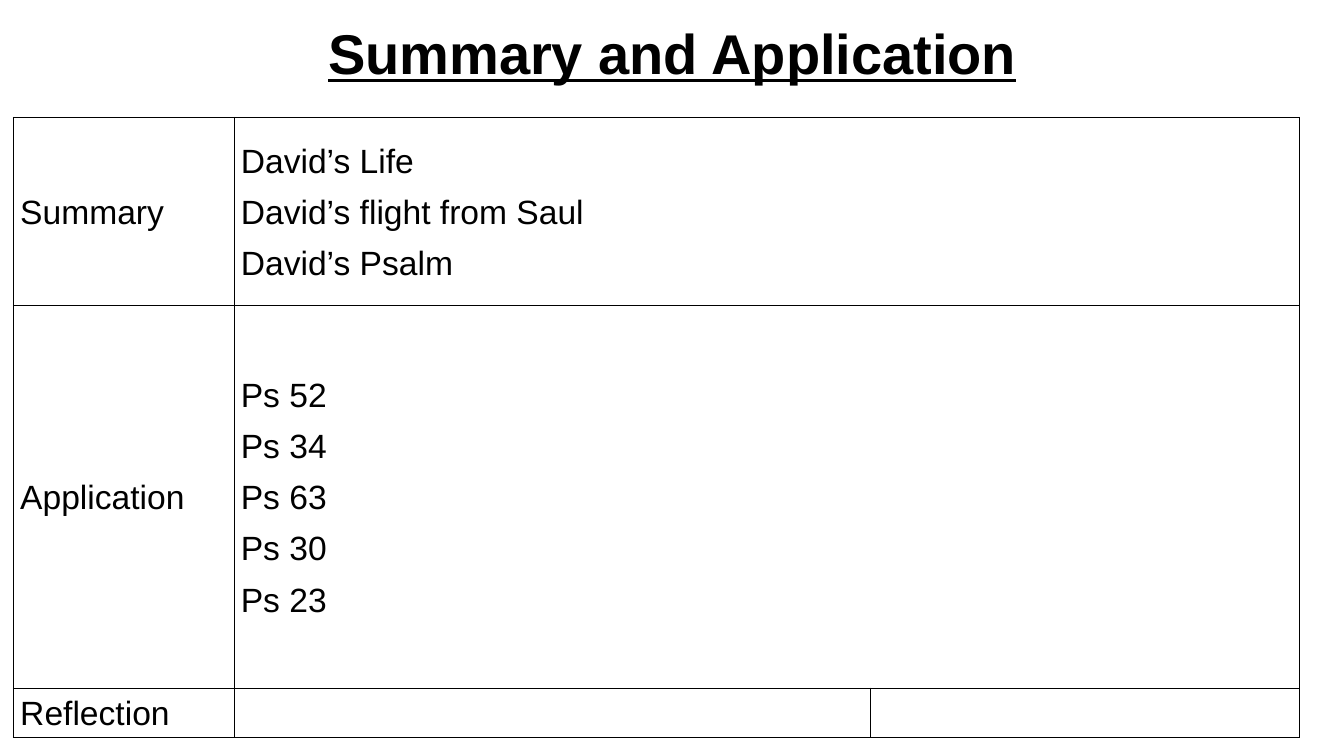
from lxml.etree import SubElement
from pptx import Presentation
from pptx.dml.color import RGBColor
from pptx.enum.text import MSO_ANCHOR as Anchor, PP_ALIGN as Align
from pptx.oxml.ns import qn
from pptx.util import Cm, Pt

# Content
TITLE = "Summary and Application"
SECTIONS = [
    ("Summary", ["David’s Life", "David’s flight from Saul", "David’s Psalm"]),
    ("Application", ["Ps 52", "Ps 34", "Ps 63", "Ps 30", "Ps 23"]),
    ("Reflection", []),
]

# Layout and style
COLUMN_WIDTHS = [Cm(5.56), Cm(16.05), Cm(10.8)]
ROW_HEIGHTS = [Cm(4.75), Cm(9.63), Cm(1.25)]
BLACK = RGBColor(0, 0, 0)
FONT = "Arial"
BORDER = Pt(0.28)


def set_font(paragraph, size):
    paragraph.font.name = FONT
    paragraph.font.size = Pt(size)
    paragraph.font.color.rgb = BLACK


def write_cell(cell, lines):
    cell.text = "\n".join(lines)
    for paragraph in cell.text_frame.paragraphs:
        set_font(paragraph, 24)
        paragraph.font.bold = False
        paragraph.alignment = Align.JUSTIFY
        paragraph.line_spacing = 1.07
        paragraph.space_after = Pt(8)


def style_cell(cell):
    cell.vertical_anchor = Anchor.MIDDLE
    cell.margin_left = cell.margin_right = Cm(0.18)
    cell.margin_top = cell.margin_bottom = Cm(0.05)
    properties = cell._tc.get_or_add_tcPr()
    for side in ("a:lnL", "a:lnR", "a:lnT", "a:lnB"):
        line = SubElement(properties, qn(side), w=str(int(BORDER)))
        fill = SubElement(line, qn("a:solidFill"))
        SubElement(fill, qn("a:srgbClr"), val=str(BLACK))
    cell.fill.background()


deck = Presentation()
deck.slide_width, deck.slide_height = Cm(33.87), Cm(19.05)
slide = deck.slides.add_slide(deck.slide_layouts[6])

# Title
heading = slide.shapes.add_textbox(Cm(1.7), Cm(-0.28), Cm(30.48), Cm(3.18)).text_frame
heading.word_wrap = True
heading.vertical_anchor = Anchor.MIDDLE
heading.text = TITLE
title = heading.paragraphs[0]
title.alignment = Align.CENTER
set_font(title, 40)
title.font.bold = title.font.underline = True

# Table
table = slide.shapes.add_table(
    len(ROW_HEIGHTS), len(COLUMN_WIDTHS), Cm(0.33), Cm(2.95),
    sum(COLUMN_WIDTHS), sum(ROW_HEIGHTS)).table
table.first_row = table.horz_banding = False
for column, width in zip(table.columns, COLUMN_WIDTHS):
    column.width = width
for row, height in zip(table.rows, ROW_HEIGHTS):
    row.height = height
for cell in table.iter_cells():
    style_cell(cell)

# Sections: points span both right-hand columns
for index, (label, points) in enumerate(SECTIONS):
    write_cell(table.cell(index, 0), [label])
    if points:
        table.cell(index, 1).merge(table.cell(index, 2))
        write_cell(table.cell(index, 1), points)

deck.save("out.pptx")
